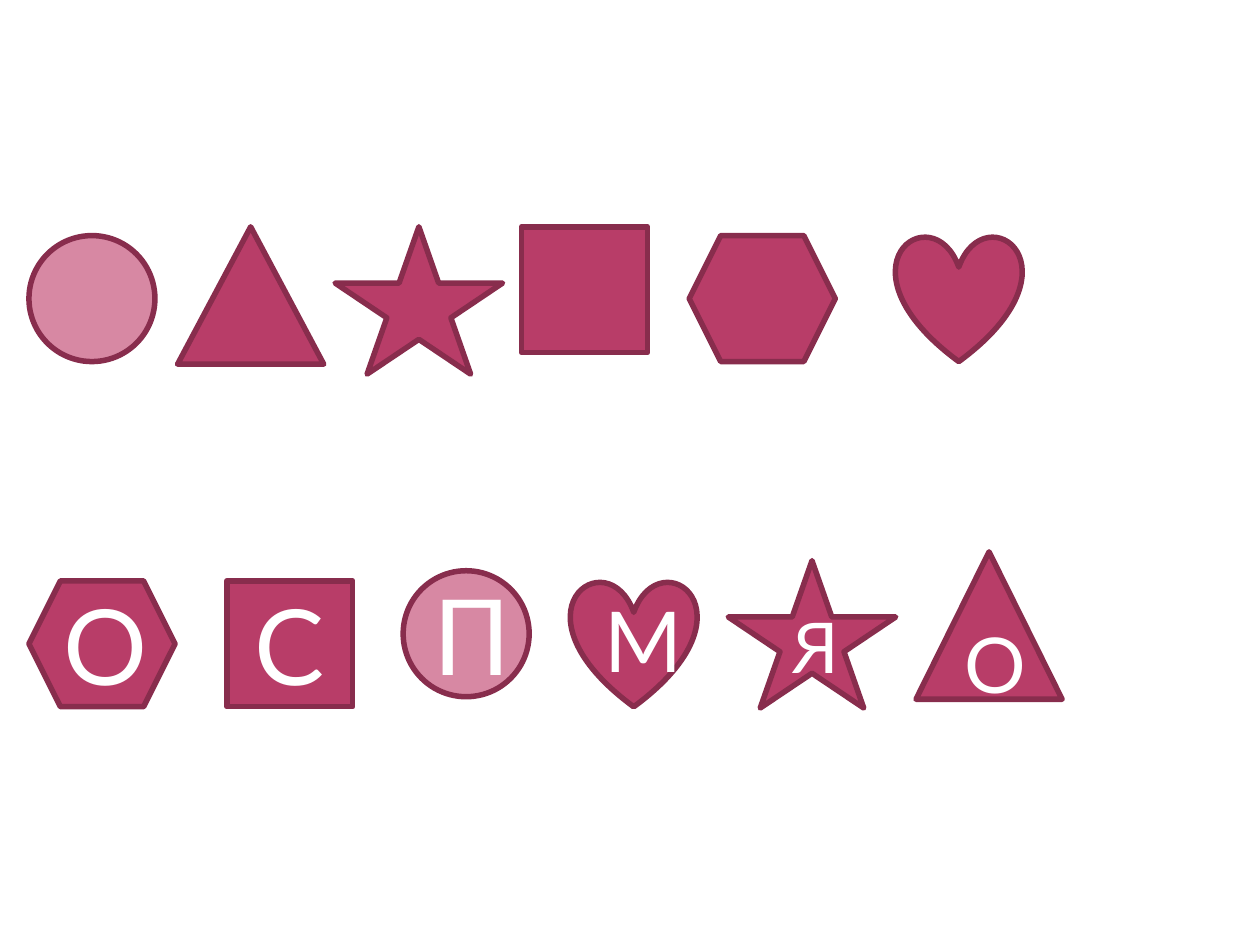
from pptx import Presentation
from pptx.dml.color import RGBColor
from pptx.enum.shapes import MSO_SHAPE
from pptx.enum.text import MSO_ANCHOR, PP_ALIGN
from pptx.util import Inches, Pt

PINK, ROSE, WINE, WHITE = "D788A3", "B83D68", "882D4D", "FFFFFF"

# Figure: preset shape, width, height, fill
FIGURES = {
    "circle": (MSO_SHAPE.OVAL, 1, 1, PINK),
    "triangle": (MSO_SHAPE.ISOSCELES_TRIANGLE, 1.16, 1.17, ROSE),
    "star": (MSO_SHAPE.STAR_5_POINT, 1.33, 1.17, ROSE),
    "square": (MSO_SHAPE.RECTANGLE, 1, 1, ROSE),
    "hexagon": (MSO_SHAPE.HEXAGON, 1.16, 1, ROSE),
    "heart": (MSO_SHAPE.HEART, 1, 1, ROSE),
}

# Figure, left, top
KEY_ROW = [
    ("circle", 0.23, 1.87),
    ("triangle", 1.41, 1.8),
    ("star", 2.66, 1.8),
    ("square", 4.14, 1.8),
    ("hexagon", 5.47, 1.87),
    ("heart", 7.11, 1.87),
]
KEY_TRIANGLE_HEIGHT = 1.09

# Figure, left, top, letter, letter size
LETTER_ROW = [
    ("hexagon", 0.23, 4.61, "О", 60),
    ("square", 1.8, 4.61, "С", 60),
    ("circle", 3.2, 4.53, "П", 60),
    ("heart", 4.53, 4.61, "М", 48),
    ("star", 5.78, 4.45, "Я", 40),
    ("triangle", 7.27, 4.38, "О", 44),
]


def set_color(color_format, value):
    color_format.rgb = RGBColor.from_string(value)


def add_figure(slide, name, left, top):
    preset, width, height, fill = FIGURES[name]
    shape = slide.shapes.add_shape(
        preset, Inches(left), Inches(top), Inches(width), Inches(height)
    )
    shape.shadow.inherit = False
    shape.fill.solid()
    set_color(shape.fill.fore_color, fill)
    set_color(shape.line.color, WINE)
    shape.line.width = Pt(3.15)
    return shape


def add_letter(shape, letter, size):
    shape.text_frame.vertical_anchor = MSO_ANCHOR.MIDDLE
    paragraph = shape.text_frame.paragraphs[0]
    paragraph.alignment = PP_ALIGN.CENTER
    run = paragraph.add_run()
    run.text = letter
    for attribute, value in {"name": "Lato", "size": Pt(size)}.items():
        setattr(run.font, attribute, value)
    set_color(run.font.color, WHITE)


def main():
    presentation = Presentation()
    presentation.slide_width = Inches(10)
    presentation.slide_height = Inches(7.5)
    slide = presentation.slides.add_slide(presentation.slide_layouts[6])

    for name, left, top in KEY_ROW:
        shape = add_figure(slide, name, left, top)
        if name == "triangle":
            shape.height = Inches(KEY_TRIANGLE_HEIGHT)
    for name, left, top, letter, size in LETTER_ROW:
        add_letter(add_figure(slide, name, left, top), letter, size)

    presentation.save("out.pptx")


if __name__ == "__main__":
    main()
